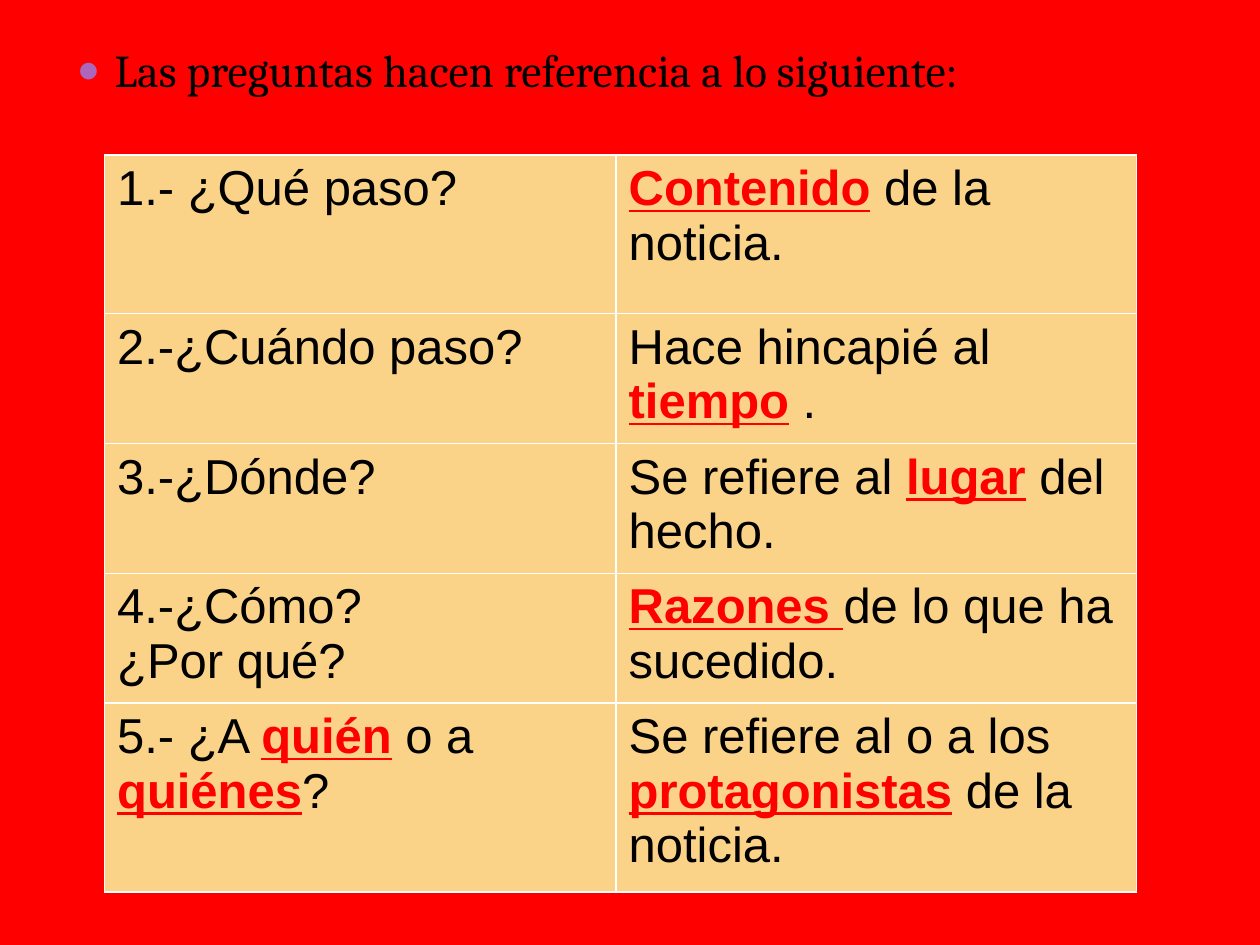
from lxml.etree import SubElement
from pptx import Presentation
from pptx.dml.color import RGBColor
from pptx.oxml.ns import qn
from pptx.util import Inches, Pt

ROWS = [
    ("1.- ¿Qué paso?", "*Contenido* de la\nnoticia."),
    ("2.-¿Cuándo paso?", "Hace hincapié al *tiempo* ."),
    ("3.-¿Dónde?", "Se refiere al *lugar* del hecho."),
    ("4.-¿Cómo?\n¿Por qué?", "*Razones *de lo que ha sucedido."),
    ("5.- ¿A *quién* o a *quiénes*?",
     "Se refiere al o a los *protagonistas* de la noticia."),
]
WIDTHS = [4.06, 4.13]
HEIGHTS = [1.26, 1.03, 1.03, 1.03, 1.5]


def color(code):
    return RGBColor.from_string(code)


def write(frame, text, size=28, font="Arial", ink="000000", accent="FF0000"):
    for row, line in enumerate(text.split("\n")):
        para = frame.add_paragraph() if row else frame.paragraphs[0]
        for part, words in enumerate(line.split("*")):
            if not words:
                continue
            marked = part % 2 == 1
            run = para.add_run()
            run.text = words
            run.font.size = Pt(size)
            run.font.name = font
            run.font.bold = run.font.underline = marked
            run.font.color.rgb = color(accent if marked else ink)


class Deck:
    back = "FF0000"
    panel = "FBD388"
    border = "FFFFFF"
    dot = "AC66BB"

    def __init__(self, show):
        self.slide = show.slides.add_slide(show.slide_layouts[1])
        fill = self.slide.background.fill
        fill.solid()
        fill.fore_color.rgb = color(self.back)
        title = self.slide.shapes.title.element
        title.getparent().remove(title)

    def body(self, text, left, top, width, height):
        box = self.slide.placeholders[1]
        box.left, box.top = Inches(left), Inches(top)
        box.width, box.height = Inches(width), Inches(height)
        para = box.text_frame.paragraphs[0]
        para.space_before = Pt(0)
        props = para._p.get_or_add_pPr()
        props.set("marL", str(Inches(0.3)))
        props.set("indent", str(Inches(-0.3)))
        tint = SubElement(props, qn("a:buClr"))
        SubElement(tint, qn("a:srgbClr"), val=self.dot)
        SubElement(props, qn("a:buSzPct"), val="85000")
        SubElement(props, qn("a:buFont"), typeface="Arial")
        SubElement(props, qn("a:buChar"), char="●")
        write(box.text_frame, text, size=26, font="Cambria")

    def cell(self, cell, text):
        props = cell._tc.get_or_add_tcPr()
        for side in ("lnL", "lnR", "lnT", "lnB"):
            line = SubElement(props, qn("a:" + side), w=str(Pt(1)))
            fill = SubElement(line, qn("a:solidFill"))
            SubElement(fill, qn("a:srgbClr"), val=self.border)
        cell.fill.solid()
        cell.fill.fore_color.rgb = color(self.panel)
        write(cell.text_frame, text)

    def table(self, rows, left, top, widths, heights):
        grid = self.slide.shapes.add_table(
            len(rows), len(widths), Inches(left), Inches(top),
            Inches(sum(widths)), Inches(sum(heights))).table
        for column, width in zip(grid.columns, widths):
            column.width = Inches(width)
        for row, height, texts in zip(grid.rows, heights, rows):
            row.height = Inches(height)
            for cell, text in zip(row.cells, texts):
                self.cell(cell, text)


def main():
    show = Presentation()
    show.slide_width, show.slide_height = Inches(10), Inches(7.5)
    deck = Deck(show)
    deck.body("Las preguntas hacen referencia a lo siguiente:",
              0.51, 0.28, 9, 6.3)
    deck.table(ROWS, 0.83, 1.23, WIDTHS, HEIGHTS)
    show.save("out.pptx")


if __name__ == "__main__":
    main()
